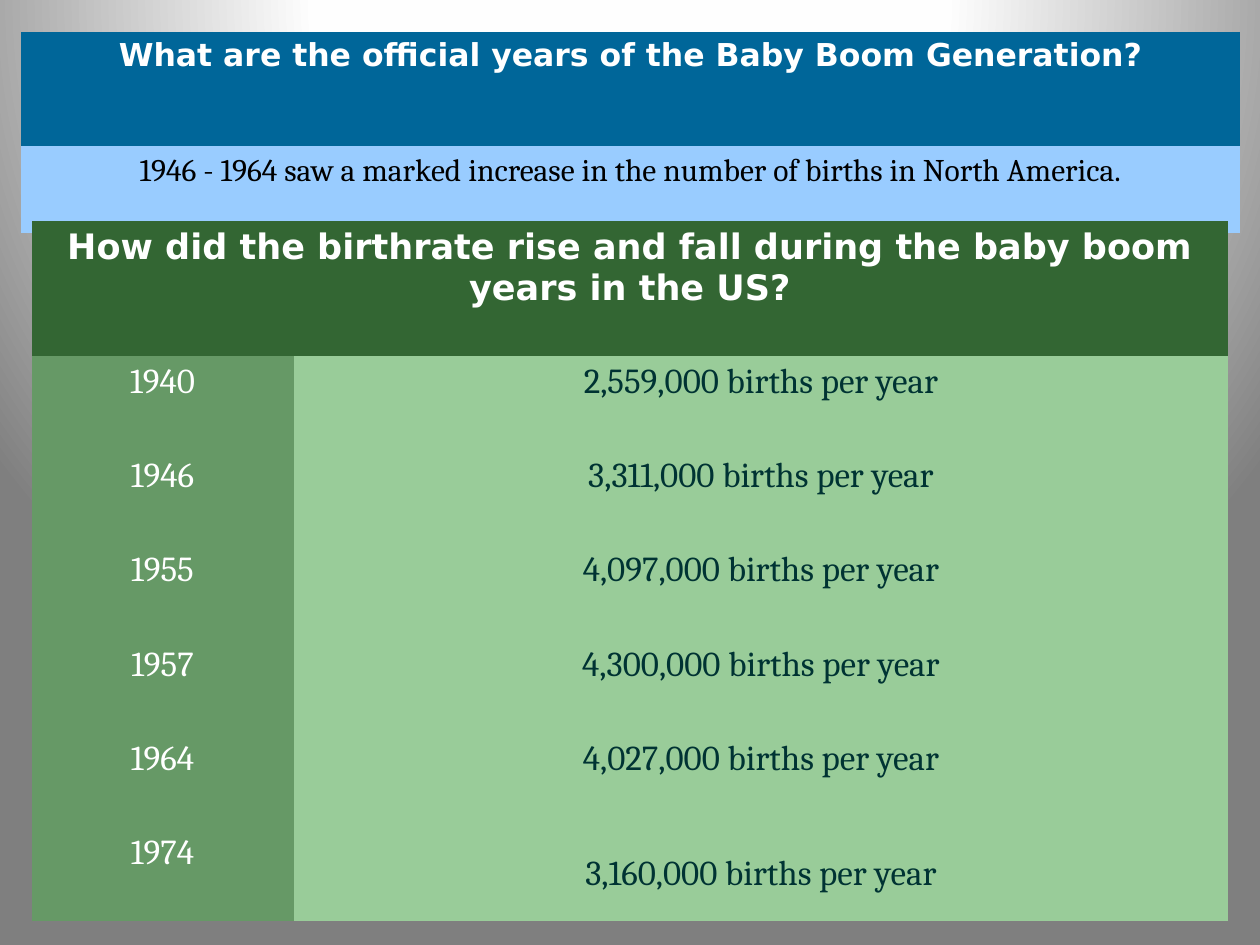
import dataclasses

import pptx
import pptx.dml.color
import pptx.enum.text
import pptx.oxml
import pptx.util


@dataclasses.dataclass(frozen=True)
class Theme:
    heading_font: str = "DejaVu Sans"
    body_font: str = "Cambria"
    small: int = 18
    large: int = 20
    white: str = "FFFFFF"
    black: str = "000000"
    ink: str = "003333"
    blue: str = "006699"
    pale_blue: str = "99CCFF"
    dark_green: str = "336633"
    mid_green: str = "669966"
    pale_green: str = "99CC99"
    backdrop: tuple = ((0, "FFFFFF"), (40, "FEFEFE"), (100, "7F7F7F"))
    plain_table: str = "{2D5ABB26-0587-4C30-8999-92F81FD0307C}"


THEME = Theme()
TOP = pptx.enum.text.MSO_ANCHOR.TOP
MIDDLE = pptx.enum.text.MSO_ANCHOR.MIDDLE

BIRTHS = [
    ("1940", "2,559,000"),
    ("1946", "3,311,000"),
    ("1955", "4,097,000"),
    ("1957", "4,300,000"),
    ("1964", "4,027,000"),
    ("1974", "3,160,000"),
]


def paint_background(slide):
    stops = "".join(
        f'<a:gs pos="{share * 1000}"><a:srgbClr val="{color}"/></a:gs>'
        for share, color in THEME.backdrop
    )
    gradient = pptx.oxml.parse_xml(
        '<a:gradFill xmlns:a="http://schemas.openxmlformats.org/drawingml/2006/main">'
        f"<a:gsLst>{stops}</a:gsLst>"
        '<a:path path="circle">'
        '<a:fillToRect l="50000" t="-80000" r="50000" b="180000"/>'
        "</a:path></a:gradFill>"
    )
    slide.background.fill.solid()
    solid = slide.element.xpath(".//p:bgPr/a:solidFill")[0]
    solid.getparent().replace(solid, gradient)


def add_plain_table(slide, box, column_shares, row_shares):
    left, top, width, height = (pptx.util.Inches(length) for length in box)
    frame = slide.shapes.add_table(
        len(row_shares), len(column_shares), left, top, width, height
    )
    table = frame.table
    table.first_row = table.horz_banding = False
    table._tbl.tblPr.find(pptx.oxml.ns.qn("a:tableStyleId")).text = THEME.plain_table
    for column, share in zip(table.columns, column_shares):
        column.width = int(width * share)
    for row, share in zip(table.rows, row_shares):
        row.height = int(height * share)
    return table


def fill_cell(cell, wording, fill, color, size, heading=False, anchor=TOP):
    cell.fill.solid()
    cell.fill.fore_color.rgb = pptx.dml.color.RGBColor.from_string(fill)
    cell.vertical_anchor = anchor
    cell.text = wording
    paragraph = cell.text_frame.paragraphs[0]
    paragraph.alignment = pptx.enum.text.PP_ALIGN.CENTER
    paragraph.font.name = THEME.heading_font if heading else THEME.body_font
    paragraph.font.size = pptx.util.Pt(size)
    paragraph.font.bold = heading
    paragraph.font.color.rgb = pptx.dml.color.RGBColor.from_string(color)


def add_official_years(slide, box):
    table = add_plain_table(slide, box, [1], [0.57, 0.43])
    fill_cell(
        table.cell(0, 0),
        "What are the official years of the Baby Boom Generation?",
        THEME.blue, THEME.white, THEME.small, heading=True,
    )
    fill_cell(
        table.cell(1, 0),
        "1946 - 1964 saw a marked increase in the number of births in North America.",
        THEME.pale_blue, THEME.black, THEME.small,
    )


def add_birthrates(slide, box):
    heading_share = 0.193
    year_share = 0.219
    birth_share = (1 - heading_share) / len(BIRTHS)
    table = add_plain_table(
        slide, box,
        [year_share, 1 - year_share],
        [heading_share] + [birth_share] * len(BIRTHS),
    )
    table.cell(0, 0).merge(table.cell(0, 1))
    fill_cell(
        table.cell(0, 0),
        "How did the birthrate rise and fall during the baby boom years in the US?",
        THEME.dark_green, THEME.white, THEME.large, heading=True,
    )
    for row, (year, births) in enumerate(BIRTHS, start=1):
        fill_cell(
            table.cell(row, 0), year, THEME.mid_green, THEME.white, THEME.large
        )
        fill_cell(
            table.cell(row, 1), f"{births} births per year",
            THEME.pale_green, THEME.ink, THEME.large,
            anchor=MIDDLE if row == len(BIRTHS) else TOP,
        )


def main():
    deck = pptx.Presentation()
    deck.slide_width = pptx.util.Inches(10)
    deck.slide_height = pptx.util.Inches(7.5)
    slide = deck.slides.add_slide(deck.slide_layouts[6])
    paint_background(slide)
    add_official_years(slide, (0.17, 0.25, 9.67, 1.6))
    add_birthrates(slide, (0.25, 1.75, 9.5, 5.56))
    deck.save("out.pptx")


if __name__ == "__main__":
    main()
